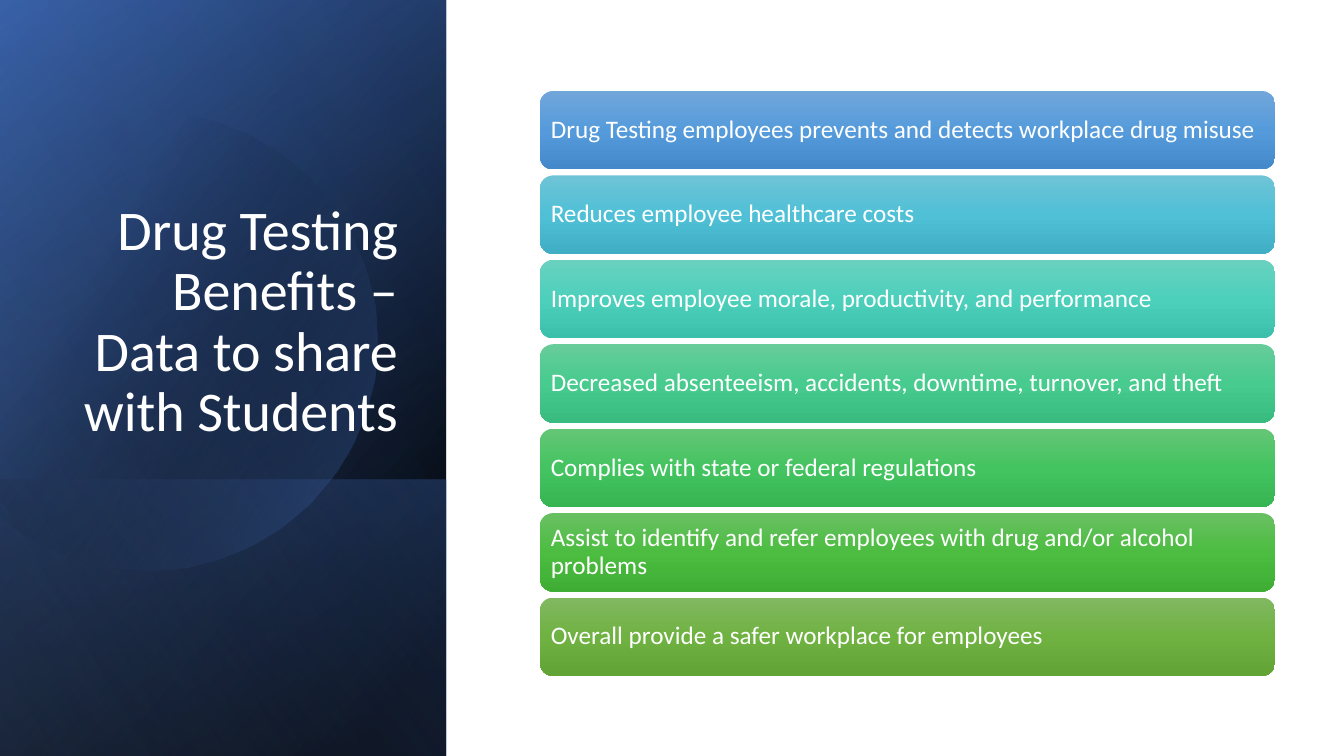
import math

import pptx
import pptx.dml.color
import pptx.enum.shapes
import pptx.enum.text
import pptx.oxml.ns
import pptx.util
from lxml import etree

RGB = pptx.dml.color.RGBColor
SHAPE = pptx.enum.shapes.MSO_SHAPE
ALIGN = pptx.enum.text.PP_ALIGN
ANCHOR = pptx.enum.text.MSO_ANCHOR
qn = pptx.oxml.ns.qn

WIDE, HIGH = 1344, 756
SCALE = 12192000 / WIDE
FONT = "Calibri"

WHITE = RGB(0xFF, 0xFF, 0xFF)
BLACK = RGB(0x00, 0x00, 0x00)
NAVY = RGB(0x2F, 0x55, 0x97)
BLUE = RGB(0x44, 0x72, 0xC4)
PALE = RGB(0x8F, 0xAA, 0xDC)

# Each card: text, then top, middle and bottom colour
CARDS = [
    ("Drug Testing employees prevents and detects workplace drug misuse",
     RGB(0x71, 0xA6, 0xDB), RGB(0x55, 0x9B, 0xDB), RGB(0x44, 0x8A, 0xCA)),
    ("Reduces employee healthcare costs",
     RGB(0x6E, 0xC4, 0xD6), RGB(0x50, 0xC0, 0xD6), RGB(0x40, 0xAF, 0xC5)),
    ("Improves employee morale, productivity, and performance",
     RGB(0x6A, 0xD1, 0xC0), RGB(0x4C, 0xD0, 0xBC), RGB(0x3C, 0xC0, 0xAC)),
    ("Decreased absenteeism, accidents, downtime, turnover, and theft",
     RGB(0x67, 0xCC, 0x9A), RGB(0x47, 0xCB, 0x8E), RGB(0x39, 0xBB, 0x7F)),
    ("Complies with state or federal regulations",
     RGB(0x64, 0xC6, 0x77), RGB(0x44, 0xC4, 0x60), RGB(0x36, 0xB5, 0x52)),
    ("Assist to identify and refer employees with drug and/or alcohol problems",
     RGB(0x69, 0xC0, 0x62), RGB(0x4C, 0xBD, 0x41), RGB(0x3F, 0xAD, 0x34)),
    ("Overall provide a safer workplace for employees",
     RGB(0x81, 0xB8, 0x61), RGB(0x6F, 0xB2, 0x42), RGB(0x62, 0xA3, 0x36)),
]


def px(n):
    return pptx.util.Emu(round(n * SCALE))


def shade(shape, stops, angle):
    """Fill with a linear gradient; stops are (place %, colour, opacity %)."""
    shape.shadow.inherit = False
    shape.line.fill.background()
    shape.fill.background()
    grad = etree.Element(qn("a:gradFill"), rotWithShape="1")
    row = etree.SubElement(grad, qn("a:gsLst"))
    for place, color, alpha in stops:
        stop = etree.SubElement(row, qn("a:gs"), pos=str(place * 1000))
        tint = etree.SubElement(stop, qn("a:srgbClr"), val=str(color))
        if alpha < 100:
            etree.SubElement(tint, qn("a:alpha"), val=str(alpha * 1000))
    etree.SubElement(grad, qn("a:lin"), ang=str(angle * 60000), scaled="0")
    props = shape._element.spPr
    props.replace(props.find(qn("a:noFill")), grad)


def style(frame, size, align, anchor):
    frame.word_wrap = True
    frame.auto_size = pptx.enum.text.MSO_AUTO_SIZE.NONE
    frame.vertical_anchor = anchor
    for para in frame.paragraphs:
        para.alignment = align
        para.line_spacing = 0.9
        for run in para.runs:
            run.font.name = FONT
            run.font.size = pptx.util.Pt(size)
            run.font.color.rgb = WHITE


def add_layer(slide, box, stops, angle):
    """Cover the box with a rectangle turned by 90 degrees and flipped."""
    x, y, w, h = box
    layer = slide.shapes.add_shape(
        SHAPE.RECTANGLE, px(x + (w - h) / 2), px(y + (h - w) / 2), px(h), px(w))
    layer.rotation = 90
    layer._element.spPr.find(qn("a:xfrm")).set("flipH", "1")
    shade(layer, stops, angle)


def add_disc(slide, box):
    """Draw a disc cut off by the left edge of the box."""
    x, y, w, h = box
    mid, rise, size = x + 148, y + 341, 229
    dots = [(mid + size * math.cos(math.radians(a)),
             rise + size * math.sin(math.radians(a)))
            for a in range(-130, 131, 2)]
    path = slide.shapes.build_freeform(*dots[0], scale=SCALE)
    path.add_line_segments(dots[1:], close=True)
    shade(path.convert_to_shape(), [(29, BLACK, 0), (100, BLUE, 43)], 30)


def add_panel(slide, box):
    x, y, w, h = box
    foot = 276
    add_layer(slide, box, [(8, BLACK, 100), (100, NAVY, 100)], 50)
    add_layer(slide, box, [(0, BLACK, 0), (99, BLUE, 46)], 30)
    add_layer(slide, (x, y + h - foot, w, foot),
              [(2, BLUE, 29), (100, BLACK, 30)], 130)
    add_disc(slide, box)
    add_layer(slide, box, [(0, BLACK, 0), (99, PALE, 11)], 120)

    # Title, brought in front of the panel
    title = slide.shapes.title
    slide.shapes._spTree.append(title._element)
    title.left, title.top = px(x + 64), px(y + 185)
    title.width, title.height = px(344), px(264)
    title.text_frame.text = "Drug Testing Benefits – Data to share with Students"
    style(title.text_frame, 40, ALIGN.RIGHT, ANCHOR.BOTTOM)


def add_cards(slide, box):
    x, y, w, h = box
    gap = 6
    step = (h + gap) / len(CARDS)
    for i, (text, top, mid, low) in enumerate(CARDS):
        card = slide.shapes.add_shape(
            SHAPE.ROUNDED_RECTANGLE, px(x), px(y + i * step), px(w), px(step - gap))
        shade(card, [(0, top, 100), (50, mid, 100), (100, low, 100)], 90)
        frame = card.text_frame
        frame.text = text
        # The rounded corners add about 4 px to these insets
        frame.margin_left = frame.margin_right = px(7)
        frame.margin_top = frame.margin_bottom = px(7)
        style(frame, 18, ALIGN.LEFT, ANCHOR.MIDDLE)


def main():
    deck = pptx.Presentation()
    deck.slide_width, deck.slide_height = px(WIDE), px(HIGH)
    slide = deck.slides.add_slide(deck.slide_layouts[5])
    add_panel(slide, (0, 0, 446, HIGH))
    add_cards(slide, (540, 91, 735, 585))
    deck.save("out.pptx")


if __name__ == "__main__":
    main()
